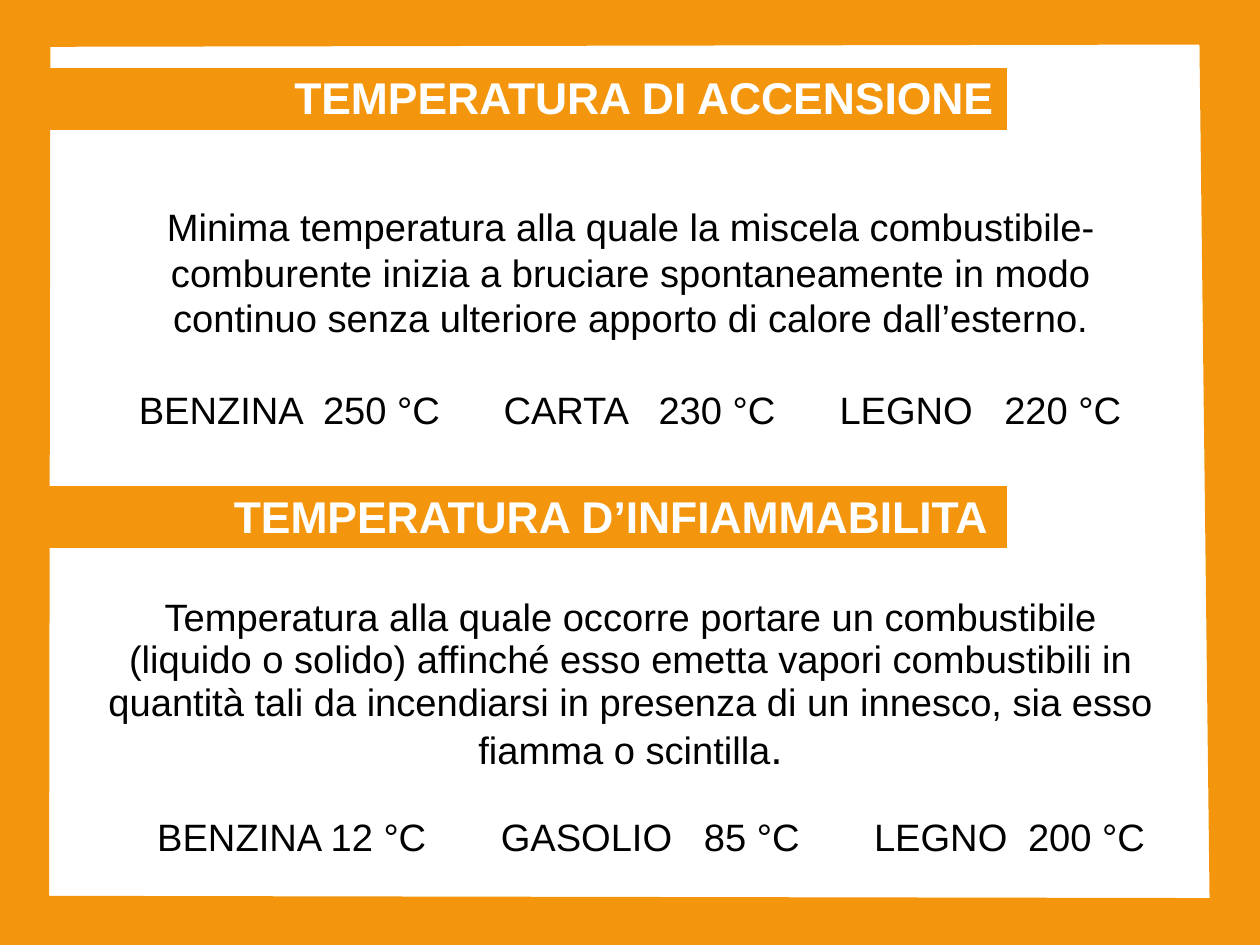
import pptx
import pptx.util
import pptx.dml.color
import pptx.enum.shapes
import pptx.enum.text
import lxml.etree
from pptx.oxml.ns import qn

SLIDE_W = pptx.util.Cm(28)
SLIDE_H = pptx.util.Cm(21)
ORANGE, WHITE, BLACK = "F3960D", "FFFFFF", "000000"
ALIGN = pptx.enum.text.PP_ALIGN


def color(value):
    return pptx.dml.color.RGBColor.from_string(value)


def point(x, y):
    return round(SLIDE_W * x / 100), round(SLIDE_H * y / 100)


def place(box):
    return point(*box[:2]) + point(*box[2:])


def add_text(p, text, size=24, fill=BLACK, bold=False):
    r = p.add_run()
    r.text = text
    r.font.name = "Arial"
    r.font.size = pptx.util.Pt(size)
    r.font.bold = bold
    r.font.color.rgb = color(fill)


def add_band(slide, box, title, indent):
    x, y, w, h = place(box)
    sp = slide.shapes.add_shape(
        pptx.enum.shapes.MSO_SHAPE.ROUNDED_RECTANGLE, x, y, w, h)
    sp.adjustments[0] = 0
    sp.shadow.inherit = False
    sp.fill.solid()
    sp.fill.fore_color.rgb = color(ORANGE)
    sp.line.color.rgb = color(WHITE)
    sp.line.width = pptx.util.Pt(0.75)
    tf = sp.text_frame
    tf.word_wrap = True
    tf.margin_left = round(w * indent / 100)
    tf.margin_right = 0
    tf.margin_bottom = pptx.util.Inches(0.08)
    tf.vertical_anchor = pptx.enum.text.MSO_ANCHOR.MIDDLE
    p = tf.paragraphs[0]
    p.alignment = ALIGN.LEFT
    add_text(p, title, size=28, fill=WHITE, bold=True)


def add_frame(slide, outer, inner):
    builder = slide.shapes.build_freeform(*point(*outer[0]))
    builder.add_line_segments([point(*c) for c in outer[1:]], close=True)
    builder.move_to(*point(*inner[0]))
    builder.add_line_segments([point(*c) for c in inner[1:]], close=True)
    sp = builder.convert_to_shape()
    sp.shadow.inherit = False
    sp.fill.solid()
    sp.fill.fore_color.rgb = color(ORANGE)
    sp.line.fill.background()


def add_body(slide, box, runs, examples, stops, spacing, gap):
    x, y, w, h = place(box)
    tf = slide.shapes.add_textbox(x, y, w, h).text_frame
    tf.word_wrap = True
    p = tf.paragraphs[0]
    p.alignment = ALIGN.CENTER
    p.line_spacing = spacing
    for text, size in runs:
        add_text(p, text, size=size)
    p = tf.add_paragraph()
    p.alignment = ALIGN.LEFT
    p.line_spacing = spacing
    p.space_before = pptx.util.Pt(gap)
    tabs = lxml.etree.SubElement(p._p.get_or_add_pPr(), qn("a:tabLst"))
    for stop in stops:
        lxml.etree.SubElement(tabs, qn("a:tab"),
                              pos=str(round(w * stop / 100)), algn="l")
    add_text(p, "".join("\t" + part for pair in examples for part in pair))


def main():
    prs = pptx.Presentation()
    prs.slide_width, prs.slide_height = SLIDE_W, SLIDE_H
    slide = prs.slides.add_slide(prs.slide_layouts[6])

    add_band(slide, (0, 7.13, 80, 6.65), "TEMPERATURA DI ACCENSIONE", 29.2)
    add_band(slide, (0, 51.4, 80, 6.65), "TEMPERATURA D’INFIAMMABILITA", 23.2)
    add_frame(slide,
              [(0, 0), (100, 0), (100, 100), (0, 100)],
              [(4, 4.96), (3.9, 94.8), (96, 95.04), (95.2, 4.72)])
    add_body(
        slide, (7.17, 20.92, 85.75, 33),
        [("Minima temperatura alla quale la miscela combustibile-comburente "
          "inizia a bruciare spontaneamente in modo continuo senza ulteriore "
          "apporto di calore dall’esterno.", 24)],
        [("BENZINA", "250 °C"), ("CARTA", "230 °C"), ("LEGNO", "220 °C")],
        (3.45, 20.5, 37.2, 51.55, 68.3, 83.55), 1.0, 29)
    add_body(
        slide, (7.17, 62.6, 85.75, 29.4),
        [("Temperatura alla quale occorre portare un combustibile (liquido o "
          "solido) affinché esso emetta vapori combustibili in quantità tali "
          "da incendiarsi in presenza di un innesco, sia esso fiamma o "
          "scintilla", 24), (".", 28)],
        [("BENZINA", "12 °C"), ("GASOLIO", "85 °C"), ("LEGNO", "200 °C")],
        (5.15, 21.2, 36.95, 55.75, 71.5, 85.75), 0.93, 27)
    prs.save("out.pptx")


if __name__ == "__main__":
    main()
